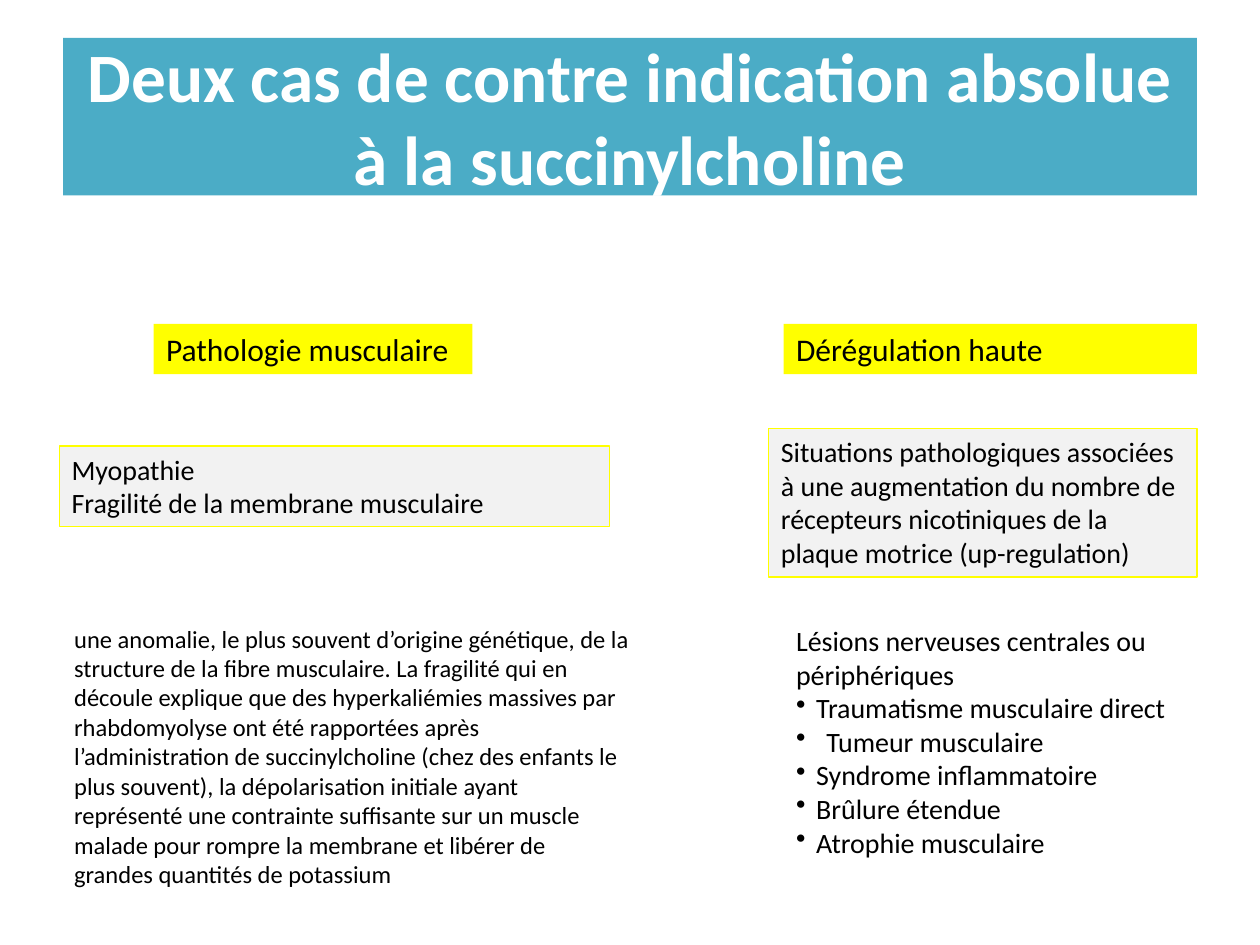
from pptx import Presentation
from pptx.dml.color import RGBColor
from pptx.enum.text import MSO_ANCHOR, PP_ALIGN
from pptx.oxml.xmlchemy import OxmlElement
from pptx.util import Inches, Pt

TEAL = RGBColor(0x4B, 0xAC, 0xC6)
YELLOW = RGBColor(0xFF, 0xFF, 0x00)
GREY = RGBColor(0xF2, 0xF2, 0xF2)
BLACK = RGBColor(0, 0, 0)
WHITE = RGBColor(0xFF, 0xFF, 0xFF)


def add_bullet(p, indent):
    pPr = p._p.get_or_add_pPr()
    pPr.set("marL", str(Inches(indent)))
    pPr.set("indent", str(-Inches(indent)))
    bu = OxmlElement("a:buChar")
    bu.set("char", "•")
    pPr.append(bu)


def add_box(at, size, lines, fill=None, line=None):
    """Add a text box with one paragraph per line and return its text frame."""
    box = s.shapes.add_textbox(*[Inches(v) for v in at])
    if fill is not None:
        box.fill.solid()
        box.fill.fore_color.rgb = fill
    if line is not None:
        box.line.color.rgb = line
        box.line.width = Pt(0.75)
    tf = box.text_frame
    tf.word_wrap = True
    tf.text = "\n".join(lines)
    for p in tf.paragraphs:
        for r in p.runs:
            r.font.size = Pt(size)
            r.font.name = "Calibri"
            r.font.color.rgb = BLACK
    return tf


prs = Presentation()
prs.slide_width, prs.slide_height = Inches(10), Inches(7.5)
s = prs.slides.add_slide(prs.slide_layouts[5])

title = s.shapes.title
title.left, title.top = Inches(0.5), Inches(0.3)
title.width, title.height = Inches(9), Inches(1.25)
title.fill.solid()
title.fill.fore_color.rgb = TEAL
tf = title.text_frame
tf.text = "Deux cas de contre indication absolue à la succinylcholine"
tf.vertical_anchor = MSO_ANCHOR.MIDDLE
p = tf.paragraphs[0]
p.alignment = PP_ALIGN.CENTER
font = p.runs[0].font
font.size, font.bold, font.name = Pt(39.6), True, "Calibri"
font.color.rgb = WHITE

# Left column: muscle disease
add_box((1.22, 2.57, 2.53, 0.4), 18, ["Pathologie musculaire"], YELLOW)
add_box((0.47, 3.54, 4.37, 0.64), 16,
        ["Myopathie", "Fragilité de la membrane musculaire"], GREY, YELLOW)
add_box((0.49, 4.9, 4.61, 2.22), 14, [
    "une anomalie, le plus souvent d’origine génétique, de la structure de la "
    "fibre musculaire. La fragilité qui en découle explique que des "
    "hyperkaliémies massives par rhabdomyolyse ont été rapportées après "
    "l’administration de succinylcholine (chez des enfants le plus souvent), "
    "la dépolarisation initiale ayant représenté une contrainte suffisante "
    "sur un muscle malade pour rompre la membrane et libérer de grandes "
    "quantités de potassium"])

# Right column: up-regulation
add_box((6.22, 2.57, 3.28, 0.4), 18, ["Dérégulation haute"], YELLOW)
add_box((6.1, 3.4, 3.4, 1.18), 16, [
    "Situations pathologiques associées à une augmentation du nombre de "
    "récepteurs nicotiniques de la plaque motrice (up-regulation)"],
    GREY, YELLOW)
causes = [("Traumatisme musculaire direct", 0.16), ("Tumeur musculaire", 0.24),
          ("Syndrome inflammatoire", 0.16), ("Brûlure étendue", 0.16),
          ("Atrophie musculaire", 0.16)]
tf = add_box((6.22, 4.9, 3.56, 1.99), 16,
             ["Lésions nerveuses centrales ou périphériques"]
             + [cause for cause, _ in causes])
for p, (_, indent) in zip(tf.paragraphs[1:], causes):
    add_bullet(p, indent)

prs.save("out.pptx")
